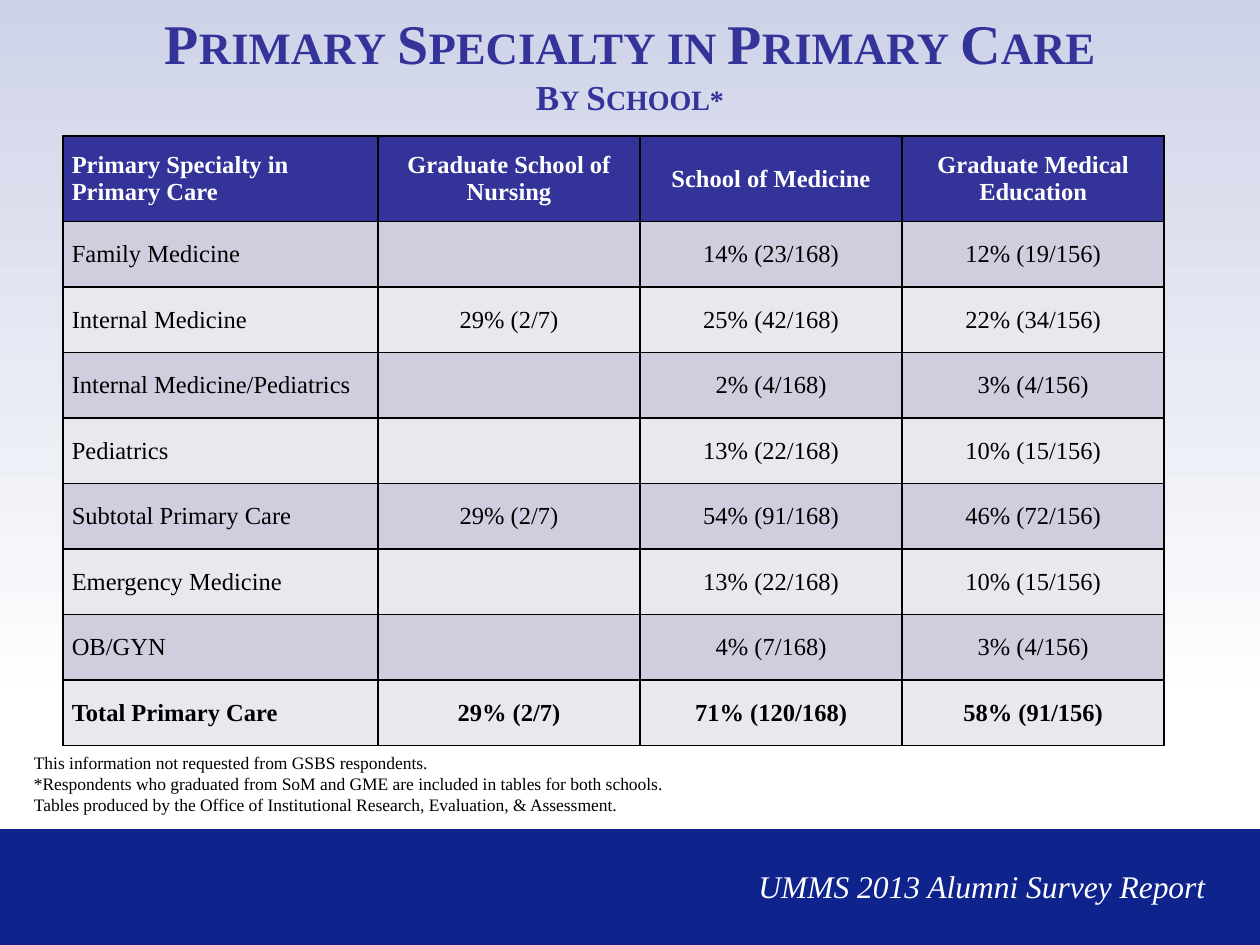
"""Build the slide on primary specialty in primary care by school."""
import copy
import dataclasses
from typing import Any

import lxml.etree
import pptx
import pptx.dml.color
import pptx.enum.shapes
import pptx.enum.text
import pptx.oxml.ns
import pptx.util

Inches = pptx.util.Inches
RGBColor = pptx.dml.color.RGBColor
Align = pptx.enum.text.PP_ALIGN
Anchor = pptx.enum.text.MSO_ANCHOR
Fit = pptx.enum.text.MSO_AUTO_SIZE
qn = pptx.oxml.ns.qn

NAVY = RGBColor(0x0F, 0x23, 0x8C)
INDIGO = RGBColor(0x33, 0x33, 0x99)
SKY = RGBColor(0xCF, 0xD3, 0xE8)
LILAC = RGBColor(0xCE, 0xCE, 0xDE)
PALE = RGBColor(0xE8, 0xE8, 0xEF)
WHITE = RGBColor(0xFF, 0xFF, 0xFF)
BLACK = RGBColor(0, 0, 0)

FACE = "Times New Roman"
WIDTHS = [2.5, 2.08, 2.08, 2.08]
HEAD, BODY = 0.68, 0.52
ROWS = [
    ["Primary Specialty in Primary Care", "Graduate School of Nursing",
     "School of Medicine", "Graduate Medical Education"],
    ["Family Medicine", "", "14% (23/168)", "12% (19/156)"],
    ["Internal Medicine", "29% (2/7)", "25% (42/168)", "22% (34/156)"],
    ["Internal Medicine/Pediatrics", "", "2% (4/168)", "3% (4/156)"],
    ["Pediatrics", "", "13% (22/168)", "10% (15/156)"],
    ["Subtotal Primary Care", "29% (2/7)", "54% (91/168)", "46% (72/156)"],
    ["Emergency Medicine", "", "13% (22/168)", "10% (15/156)"],
    ["OB/GYN", "", "4% (7/168)", "3% (4/156)"],
    ["Total Primary Care", "29% (2/7)", "71% (120/168)", "58% (91/156)"],
]


@dataclasses.dataclass
class Band:
    top: float
    height: float
    colors: list[RGBColor]


@dataclasses.dataclass
class Note:
    box: tuple[float, float, float, float]
    lines: list[str]
    form: dict[str, Any]


BANDS = [Band(0, 5.67, [SKY, WHITE]), Band(6.58, 0.92, [NAVY])]
NOTES = [
    Note((0.17, 5.92, 7.58, 0.61), [
        "This information not requested from GSBS respondents.",
        "*Respondents who graduated from SoM and GME are included in tables for both schools.",
        "Tables produced by the Office of Institutional Research, Evaluation, & Assessment.",
    ], {"size": 10, "color": BLACK}),
    Note((5.92, 6.83, 3.92, 0.4), ["UMMS 2013 Alumni Survey Report"],
         {"size": 18, "color": WHITE, "italic": True}),
]


def add_run(par, text: str, form: dict[str, Any]):
    run = par.add_run()
    run.text = text
    values = {"name": FACE, **form, "size": pptx.util.Pt(form["size"])}
    run.font.color.rgb = values.pop("color")
    for key, value in values.items():
        setattr(run.font, key, value)
    return run


def draw_band(slide, band: Band) -> None:
    shape = slide.shapes.add_shape(
        pptx.enum.shapes.MSO_SHAPE.RECTANGLE,
        0, Inches(band.top), Inches(10), Inches(band.height))
    shape.shadow.inherit = False
    shape.line.fill.background()
    if len(band.colors) == 1:
        shape.fill.solid()
        shape.fill.fore_color.rgb = band.colors[0]
        return
    shape.fill.gradient()
    shape.fill.gradient_angle = 270
    for stop, color in zip(shape.fill.gradient_stops, band.colors):
        stop.color.rgb = color


def draw_title(slide) -> None:
    title = slide.shapes.title
    title.left, title.top, title.width, title.height = 0, 0, Inches(10), Inches(1)
    frame = title.text_frame
    frame.auto_size = Fit.NONE
    frame.vertical_anchor = Anchor.MIDDLE
    par = frame.paragraphs[0]
    par.alignment = Align.CENTER
    form = {"color": INDIGO, "bold": True}
    first = add_run(par, "Primary Specialty in Primary Care", {**form, "size": 32})
    par.add_line_break()
    last = add_run(par, "By School*", {**form, "size": 20})
    for run in (first, last):
        run.font._element.set("cap", "small")
    par._p.find(qn("a:br")).append(copy.deepcopy(first.font._element))
    slide.shapes._spTree.append(title._element)


def set_edges(cell) -> None:
    props = cell._tc.get_or_add_tcPr()
    for spot, side in enumerate(("a:lnL", "a:lnR", "a:lnT", "a:lnB")):
        line = lxml.etree.Element(qn(side), w=str(pptx.util.Pt(1)))
        fill = lxml.etree.SubElement(line, qn("a:solidFill"))
        lxml.etree.SubElement(fill, qn("a:srgbClr"), val=str(BLACK))
        props.insert(spot, line)


def draw_table(slide) -> None:
    heights = [HEAD] + [BODY] * (len(ROWS) - 1)
    table = slide.shapes.add_table(
        len(ROWS), len(WIDTHS), Inches(0.5), Inches(1.08),
        Inches(sum(WIDTHS)), Inches(sum(heights))).table
    for col, width in zip(table.columns, WIDTHS):
        col.width = Inches(width)
    for r, (row, height) in enumerate(zip(ROWS, heights)):
        table.rows[r].height = Inches(height)
        shade = INDIGO if r == 0 else LILAC if r % 2 else PALE
        form = {"size": 14, "color": BLACK if r else WHITE,
                "bold": r == 0 or "Total" in row[0].title()}
        for c, text in enumerate(row):
            cell = table.cell(r, c)
            cell.fill.solid()
            cell.fill.fore_color.rgb = shade
            cell.vertical_anchor = Anchor.MIDDLE
            cell.margin_left = cell.margin_right = Inches(0.07)
            cell.margin_top = cell.margin_bottom = 0
            set_edges(cell)
            if text:
                par = cell.text_frame.paragraphs[0]
                par.alignment = Align.CENTER if c else Align.LEFT
                add_run(par, text, form)


def draw_note(slide, note: Note) -> None:
    frame = slide.shapes.add_textbox(*map(Inches, note.box)).text_frame
    frame.word_wrap = True
    frame.auto_size = Fit.SHAPE_TO_FIT_TEXT
    for i, line in enumerate(note.lines):
        par = frame.add_paragraph() if i else frame.paragraphs[0]
        add_run(par, line, note.form)


def main() -> None:
    deck = pptx.Presentation()
    deck.slide_width, deck.slide_height = Inches(10), Inches(7.5)
    slide = deck.slides.add_slide(deck.slide_layouts[5])
    for band in BANDS:
        draw_band(slide, band)
    draw_title(slide)
    draw_table(slide)
    for note in NOTES:
        draw_note(slide, note)
    deck.save("out.pptx")


if __name__ == "__main__":
    main()
